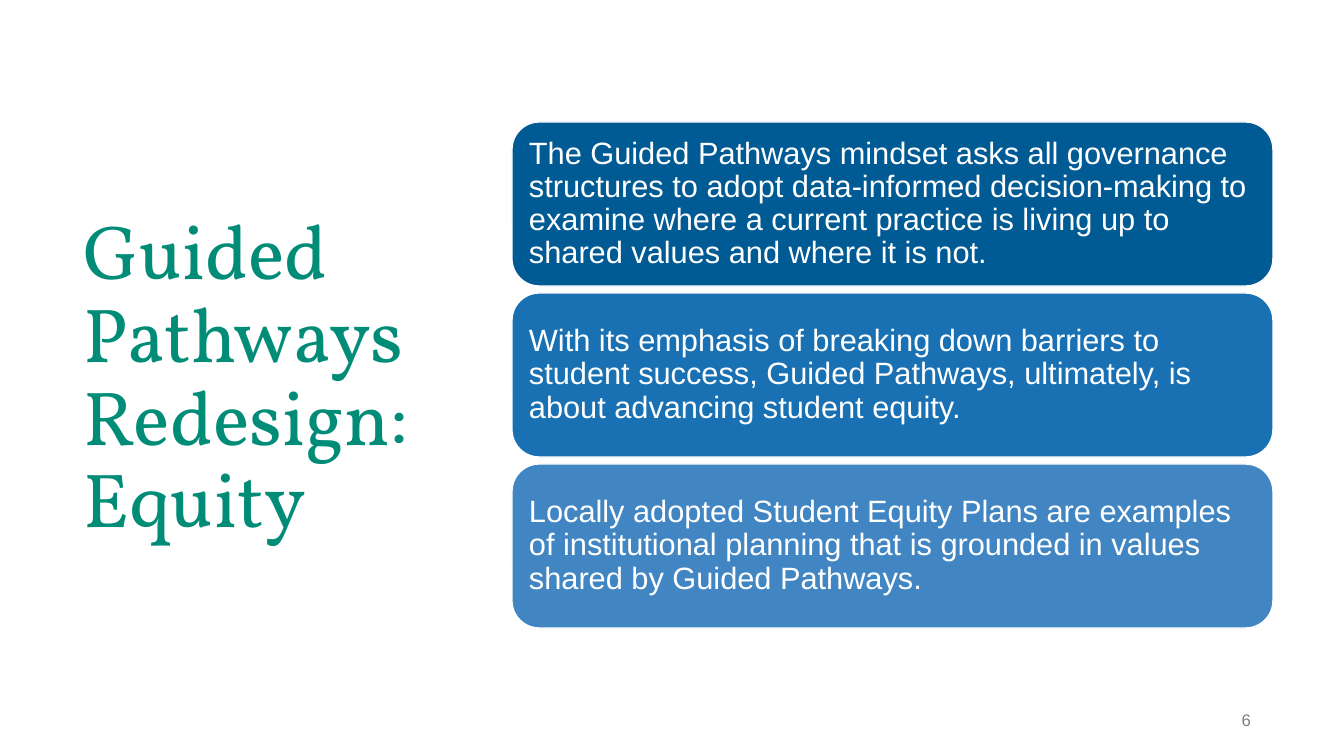
from pptx import Presentation
from pptx.dml.color import RGBColor
from pptx.enum.shapes import MSO_SHAPE
from pptx.enum.text import MSO_ANCHOR, MSO_AUTO_SIZE, PP_ALIGN
from pptx.util import Emu, Pt

WHITE = RGBColor(0xFF, 0xFF, 0xFF)
GREEN = RGBColor(0x00, 0x8C, 0x77)
GRAY = RGBColor(0x7F, 0x7F, 0x7F)
DARK_BLUE = RGBColor(0x00, 0x5B, 0x95)
BLUE = RGBColor(0x19, 0x71, 0xB4)
LIGHT_BLUE = RGBColor(0x41, 0x86, 0xC3)

EMU_PER_PX = 914400 / 100.8
CARD_LEFT, CARD_TOP, CARD_WIDTH, CARD_HEIGHT = 512, 122, 761, 164
CARD_PITCH = 171


def px(length):
    return Emu(round(length * EMU_PER_PX))


def write_text(shape, text, font_name, size, color, margins, align=PP_ALIGN.LEFT):
    """Fill a shape with one vertically centred paragraph; margins run left, top, right, bottom."""
    frame = shape.text_frame
    frame.text = text
    frame.word_wrap = True
    frame.auto_size = MSO_AUTO_SIZE.NONE
    frame.vertical_anchor = MSO_ANCHOR.MIDDLE
    (frame.margin_left, frame.margin_top,
     frame.margin_right, frame.margin_bottom) = [px(margin) for margin in margins]
    para = frame.paragraphs[0]
    para.alignment = align
    para.line_spacing = 0.9
    para.space_before = Pt(0)
    font = para.runs[0].font
    font.name = font_name
    font.size = Pt(size)
    font.color.rgb = color


deck = Presentation()
deck.slide_width, deck.slide_height = px(1344), px(756)
page = deck.slides.add_slide(deck.slide_layouts[5])

title = page.shapes.title
title.left, title.top, title.width, title.height = px(70), px(71), px(377), px(616)
write_text(title, "Guided Pathways Redesign: Equity", "Vollkorn", 54.7, GREEN, (13, 7, 13, 7))

cards = [
    (DARK_BLUE, "The Guided Pathways mindset asks all governance structures to adopt "
     "data-informed decision-making to examine where a current practice is living up to "
     "shared values and where it is not."),
    (BLUE, "With its emphasis of breaking down barriers to student success, "
     "Guided Pathways, ultimately, is about advancing student equity."),
    (LIGHT_BLUE, "Locally adopted Student Equity Plans are examples of institutional "
     "planning that is grounded in values shared by Guided Pathways."),
]
for index, (fill_color, text) in enumerate(cards):
    card = page.shapes.add_shape(
        MSO_SHAPE.ROUNDED_RECTANGLE, px(CARD_LEFT), px(CARD_TOP + index * CARD_PITCH),
        px(CARD_WIDTH), px(CARD_HEIGHT))
    card.shadow.inherit = False
    card.fill.solid()
    card.fill.fore_color.rgb = fill_color
    card.line.color.rgb = WHITE
    card.line.width = Pt(1)
    write_text(card, text, "Arial", 22, WHITE, (9, 9, 9, 9))

page_number = page.shapes.add_textbox(px(1150), px(701), px(101), px(40))
write_text(page_number, "6", "Arial", 12, GRAY, (10, 5, 0, 5), PP_ALIGN.RIGHT)

deck.save("out.pptx")
